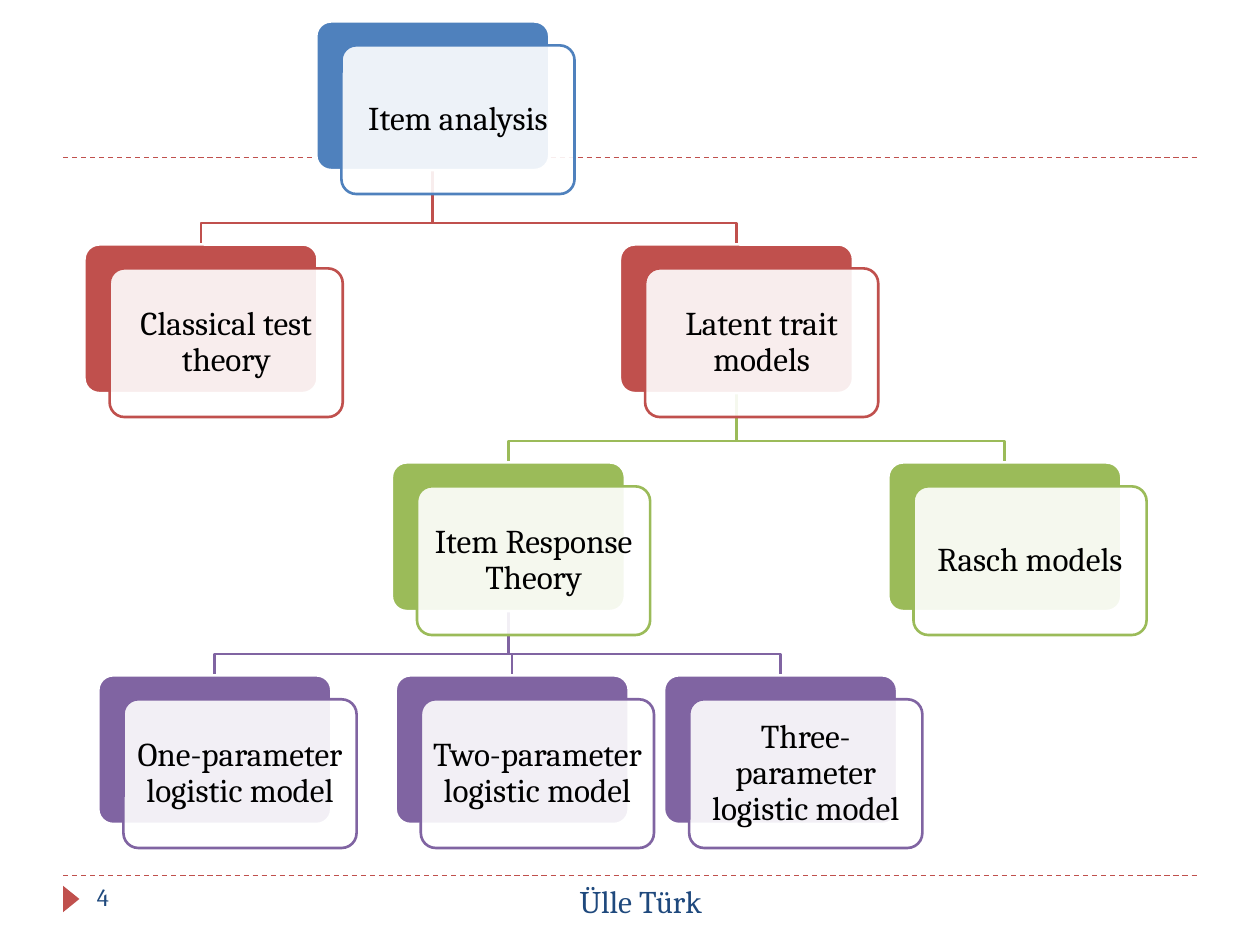
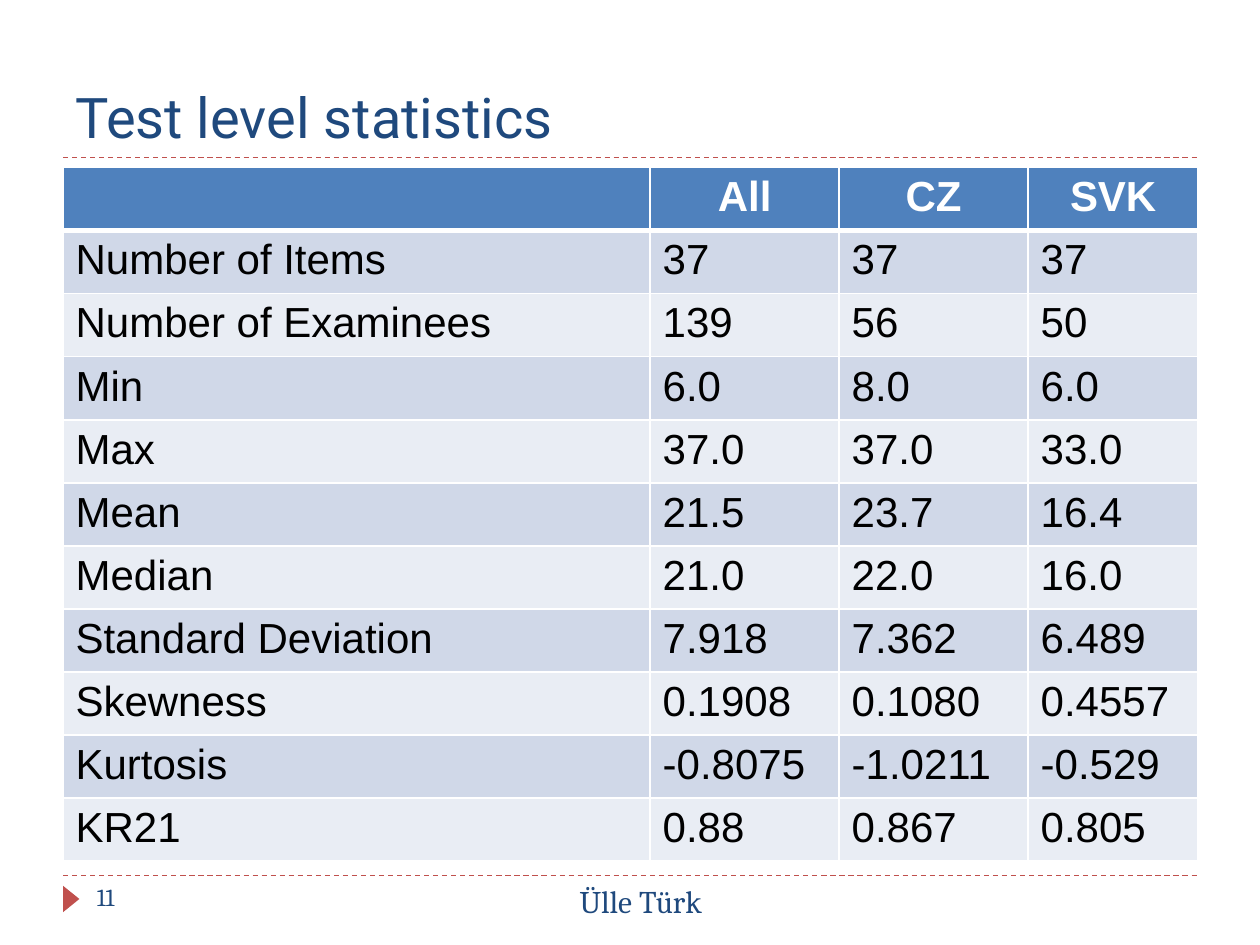
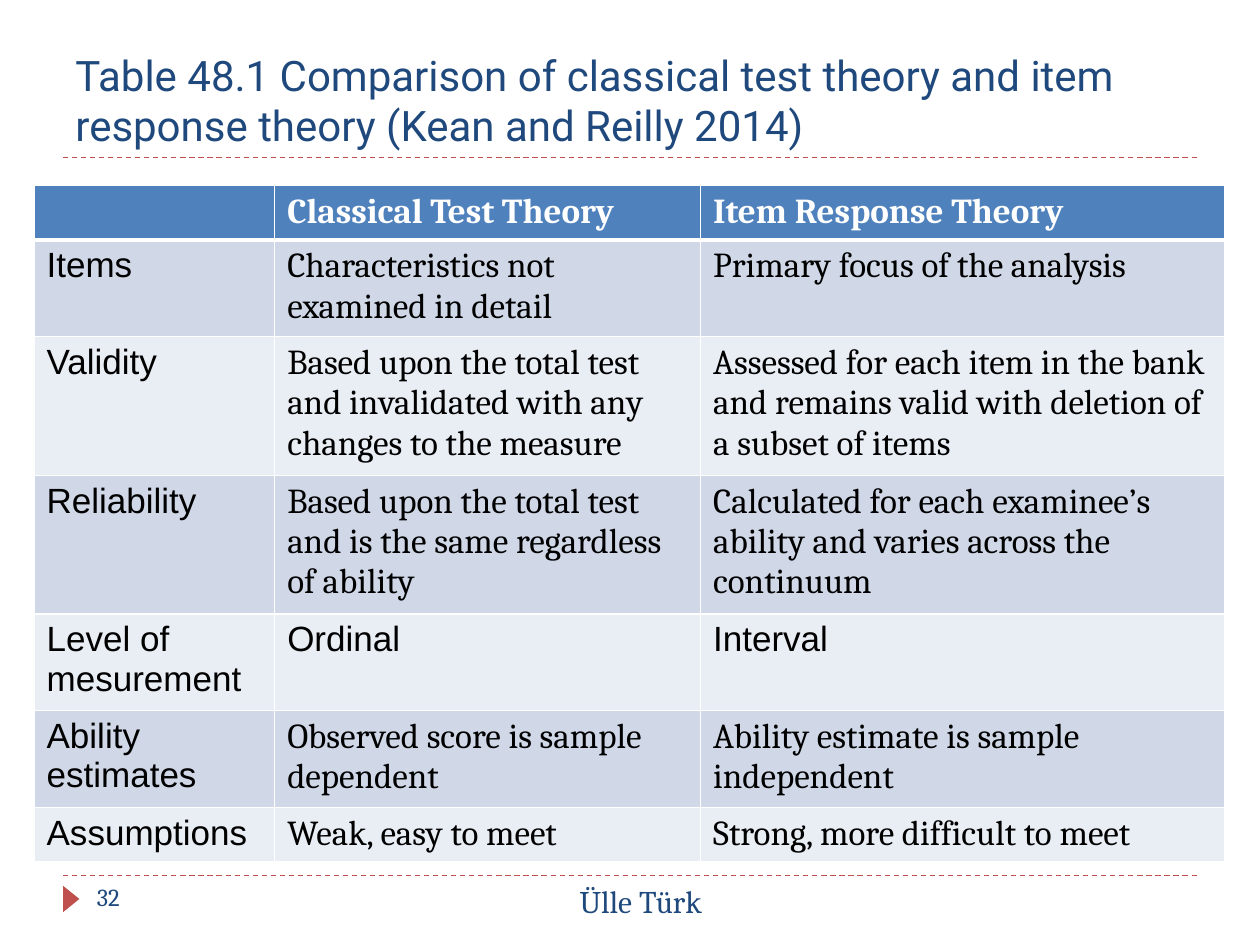
from lxml import etree
from pptx import Presentation
from pptx.dml.color import RGBColor
from pptx.enum import dml, shapes, text
from pptx.oxml.ns import qn
from pptx.util import Inches, Pt

WHITE = RGBColor(0xFF, 0xFF, 0xFF)
BLACK = RGBColor(0x00, 0x00, 0x00)
NAVY = RGBColor(0x1F, 0x49, 0x7D)
BLUE = RGBColor(0x4F, 0x81, 0xBD)
RED = RGBColor(0xC0, 0x50, 0x4D)
GREEN = RGBColor(0x9B, 0xBB, 0x59)
PURPLE = RGBColor(0x80, 0x64, 0xA2)
BANDS = (RGBColor(0xE9, 0xED, 0xF4), RGBColor(0xD0, 0xD8, 0xE8))

BODY, TITLE, PLAIN = "Cambria", "Roboto", "Arial"
LEFT, CENTER = text.PP_ALIGN.LEFT, text.PP_ALIGN.CENTER
TOP, MIDDLE, BOTTOM = (text.MSO_ANCHOR.TOP, text.MSO_ANCHOR.MIDDLE,
                       text.MSO_ANCHOR.BOTTOM)

BOX_W, BOX_H = 1.85, 1.18
SHIFT_X, SHIFT_Y = 0.2, 0.19
ELBOW_RISE = 0.17
ROW_H = 0.41

NODES = {
    "Item analysis": (2.51, 0.17, BLUE, None),
    "Classical test theory": (0.67, 1.94, RED, "Item analysis"),
    "Latent trait models": (4.92, 1.94, RED, "Item analysis"),
    "Item Response Theory": (3.11, 3.67, GREEN, "Latent trait models"),
    "Rasch models": (7.05, 3.67, GREEN, "Latent trait models"),
    "One-parameter logistic model": (0.78, 5.36, PURPLE, "Item Response Theory"),
    "Two-parameter logistic model": (3.14, 5.36, PURPLE, "Item Response Theory"),
    "Three-parameter logistic model": (5.27, 5.36, PURPLE, "Item Response Theory"),
}

STATISTICS = [
    ("", "All", "CZ", "SVK"),
    ("Number of Items", "37", "37", "37"),
    ("Number of Examinees", "139", "56", "50"),
    ("Min", "6.0", "8.0", "6.0"),
    ("Max", "37.0", "37.0", "33.0"),
    ("Mean", "21.5", "23.7", "16.4"),
    ("Median", "21.0", "22.0", "16.0"),
    ("Standard Deviation", "7.918", "7.362", "6.489"),
    ("Skewness", "0.1908", "0.1080", "0.4557"),
    ("Kurtosis", "-0.8075", "-1.0211", "-0.529"),
    ("KR21", "0.88", "0.867", "0.805"),
]

COMPARISON = [
    ("", "Classical Test Theory", "Item Response Theory"),
    ("Items", "Characteristics not examined in detail",
     "Primary focus of the analysis"),
    ("Validity",
     "Based upon the total test and invalidated with any changes to the measure",
     "Assessed for each item in the bank and remains valid with deletion of "
     "a subset of items"),
    ("Reliability",
     "Based upon the total test and is the same regardless of ability",
     "Calculated for each examinee’s ability and varies across the continuum"),
    ("Level of mesurement", "Ordinal", "Interval"),
    ("Ability estimates", "Observed score is sample dependent",
     "Ability estimate is sample independent"),
    ("Assumptions", "Weak, easy to meet", "Strong, more difficult to meet"),
]
PLAIN_CELLS = {"Ordinal", "Interval"} | {row[0] for row in COMPARISON}


def inches(*lengths):
    return [Inches(v) for v in lengths]


def write(tf, words, size, font, color, align=LEFT, bold=False):
    tf.text = words
    p = tf.paragraphs[0]
    p.alignment = align
    for r in p.runs:
        r.font.size = Pt(size)
        r.font.name = font
        r.font.bold = bold
        r.font.color.rgb = color
    return p


def add_text(s, box, words, size, font, align=LEFT, anchor=TOP):
    tf = s.shapes.add_textbox(*inches(*box)).text_frame
    tf.word_wrap = True
    tf.vertical_anchor = anchor
    write(tf, words, size, font, NAVY, align)


def add_title(s, words, size):
    add_text(s, (0.5, 0.17, 9.05, 1.07), words, size, TITLE, anchor=BOTTOM)


def add_rule(s, y):
    line = s.shapes.add_connector(shapes.MSO_CONNECTOR.STRAIGHT,
                                  *inches(0.5, y, 9.5, y))
    line.line.color.rgb = RED
    line.line.width = Pt(0.75)
    line.line.dash_style = dml.MSO_LINE.DASH
    etree.SubElement(line._element.spPr, qn("a:effectLst"))


def add_frame(prs, number):
    s = prs.slides.add_slide(prs.slide_layouts[6])
    for y in (6.95, 1.25):
        add_rule(s, y)
    marker = s.shapes.add_shape(shapes.MSO_SHAPE.ISOSCELES_TRIANGLE,
                                *inches(0.46, 7.07, 0.21, 0.13))
    marker.rotation = 90
    marker.shadow.inherit = False
    marker.fill.solid()
    marker.fill.fore_color.rgb = RED
    marker.line.fill.background()
    add_text(s, (3.17, 6.95, 3.83, 0.4), "Ülle Türk", 18, BODY, CENTER)
    add_text(s, (0.67, 6.95, 2.17, 0.4), str(number), 14, BODY)
    return s


def add_branch(s, parent, child, color):
    x1, y1 = parent[0] + BOX_W / 2, parent[1] + BOX_H
    x2, y2 = child[0] + BOX_W / 2, child[1]
    bend = y2 - ELBOW_RISE
    fb = s.shapes.build_freeform(*inches(x1, y1))
    fb.add_line_segments([inches(x1, bend), inches(x2, bend), inches(x2, y2)],
                         close=False)
    sp = fb.convert_to_shape()
    sp.shadow.inherit = False
    sp.fill.background()
    sp.line.color.rgb = color
    sp.line.width = Pt(1.5)


def add_card(s, x, y, fill, outline):
    sp = s.shapes.add_shape(shapes.MSO_SHAPE.ROUNDED_RECTANGLE,
                            *inches(x, y, BOX_W, BOX_H))
    sp.adjustments[0] = 0.1
    sp.shadow.inherit = False
    sp.fill.solid()
    sp.fill.fore_color.rgb = fill
    sp.line.color.rgb = outline
    sp.line.width = Pt(1.5)
    return sp


def add_node(s, words, x, y, color):
    add_card(s, x, y, color, WHITE)
    front = add_card(s, x + SHIFT_X, y + SHIFT_Y, WHITE, color)
    tint = front._element.spPr.find(qn("a:solidFill"))[0]
    etree.SubElement(tint, qn("a:alpha"), val="90000")
    tf = front.text_frame
    tf.word_wrap = True
    tf.vertical_anchor = MIDDLE
    tf.margin_left = tf.margin_right = Inches(0.04)
    tf.margin_top = tf.margin_bottom = Inches(0.04)
    write(tf, words, 19, BODY, BLACK, CENTER).line_spacing = 0.9


def set_borders(cell, top, bottom):
    tcPr = cell._tc.get_or_add_tcPr()
    for side, width in (("L", 1), ("R", 1), ("T", top), ("B", bottom)):
        ln = etree.SubElement(tcPr, qn("a:ln" + side), w=str(Pt(width)))
        fill = etree.SubElement(ln, qn("a:solidFill"))
        etree.SubElement(fill, qn("a:srgbClr"), val=str(WHITE))


def add_grid(s, box, widths, rows, size, font_for, head_align):
    frame = s.shapes.add_table(len(rows), len(widths), *inches(*box))
    table = frame.table
    for column, width in zip(table.columns, widths):
        column.width = Inches(width)
    for i, row in enumerate(rows):
        table.rows[i].height = Inches(ROW_H)
        head = i == 0
        for j, words in enumerate(row):
            cell = table.cell(i, j)
            set_borders(cell, 3 if i == 1 else 1, 3 if head else 1)
            cell.fill.solid()
            cell.fill.fore_color.rgb = BLUE if head else BANDS[i % 2]
            write(cell.text_frame, words, size, font_for(words),
                  WHITE if head else BLACK, head_align if head else LEFT, head)
    frame.height = Inches(box[3])


def build_tree(prs):
    s = add_frame(prs, 4)
    for x, y, color, parent in NODES.values():
        if parent:
            add_branch(s, NODES[parent], (x, y), color)
    for words, (x, y, color, _) in NODES.items():
        add_node(s, words, x, y, color)


def build_statistics(prs):
    s = add_frame(prs, 11)
    add_title(s, "Test level statistics", 32)
    add_grid(s, (0.5, 1.33, 9, 5.5), (4.66, 1.5, 1.5, 1.35), STATISTICS, 24,
             lambda words: PLAIN, CENTER)


def build_comparison(prs):
    s = add_frame(prs, 32)
    add_title(s, "Table 48.1 Comparison of classical test theory and item "
                 "response theory (Kean and Reilly 2014)", 24)
    add_grid(s, (0.27, 1.47, 9.45, 5.37), (1.91, 3.38, 4.16), COMPARISON, 20,
             lambda words: PLAIN if words in PLAIN_CELLS else BODY, LEFT)


def main():
    prs = Presentation()
    prs.slide_width, prs.slide_height = inches(10, 7.5)
    build_tree(prs)
    build_statistics(prs)
    build_comparison(prs)
    prs.save("out.pptx")


if __name__ == "__main__":
    main()
